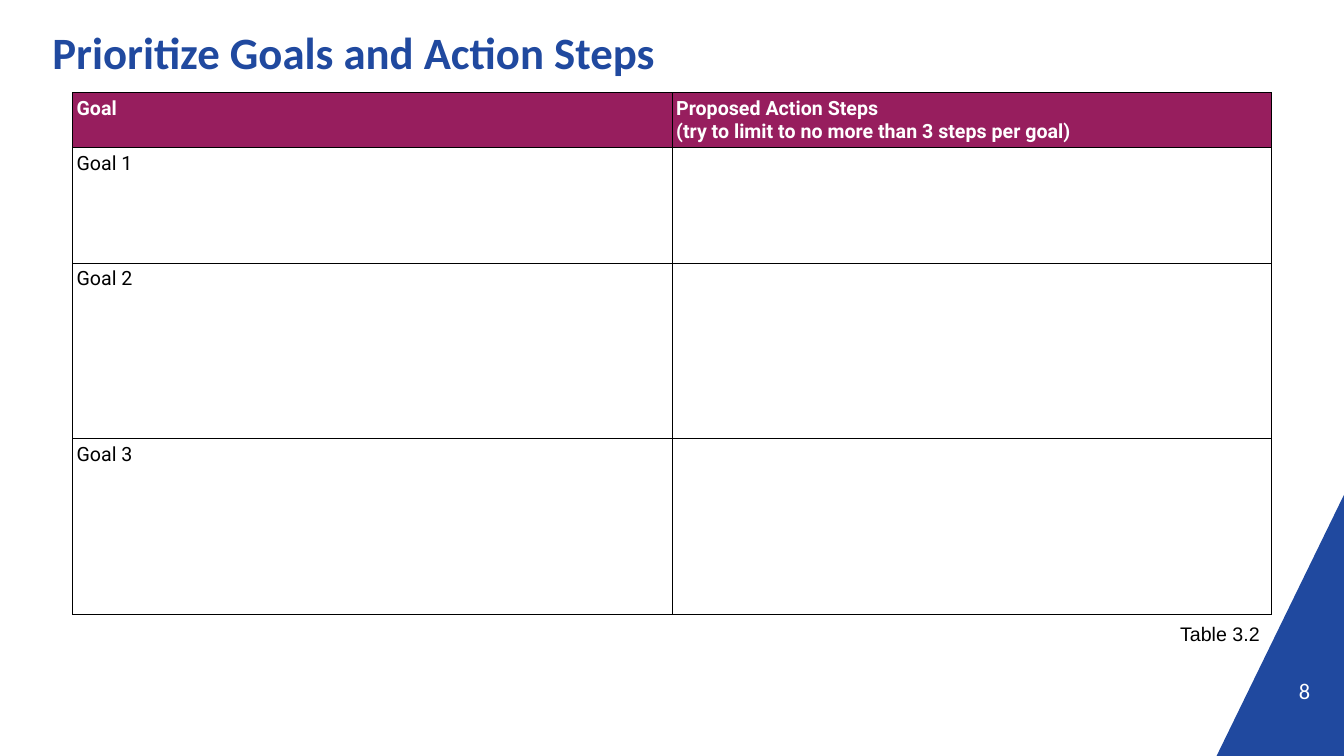
from lxml import etree
from pptx import Presentation
from pptx.dml.color import RGBColor
from pptx.enum.text import MSO_ANCHOR, PP_ALIGN
from pptx.oxml.ns import qn
from pptx.util import Cm, Pt

MIDDLE, TOP = MSO_ANCHOR.MIDDLE, MSO_ANCHOR.TOP
LEFT, RIGHT = PP_ALIGN.LEFT, PP_ALIGN.RIGHT
BLUE = RGBColor(0x20, 0x49, 0x9F)
PLUM = RGBColor(0x97, 0x1E, 0x5E)
WHITE = RGBColor(0xFF, 0xFF, 0xFF)
BLACK = RGBColor(0x00, 0x00, 0x00)
SLIDE_WIDTH, SLIDE_HEIGHT = 33.87, 19.05


class GoalSlide:
    heading_font = "Calibri"
    table_font = "Roboto"
    caption_font = "Arial"
    cell_inset = Cm(0.1)
    border_width = Pt(0.75)

    def __init__(self, deck):
        self.slide = deck.slides.add_slide(deck.slide_layouts[6])

    def add_lines(self, paragraph, lines, font, size, color, bold=False):
        for index, line in enumerate(lines):
            if index:
                paragraph.add_line_break()
            run = paragraph.add_run()
            run.text = line
            run.font.name = font
            run.font.size = Pt(size)
            run.font.bold = bold
            run.font.color.rgb = color

    def text(self, box, words, font, size, color, bold=False,
             align=LEFT, anchor=MIDDLE, insets=(0, 0)):
        frame = self.slide.shapes.add_textbox(*map(Cm, box)).text_frame
        frame.word_wrap = True
        frame.vertical_anchor = anchor
        frame.margin_left = frame.margin_right = Cm(insets[0])
        frame.margin_top = frame.margin_bottom = Cm(insets[1])
        frame.paragraphs[0].alignment = align
        self.add_lines(frame.paragraphs[0], [words], font, size, color, bold)

    def polygon(self, points, color):
        start, *others = [(Cm(x), Cm(y)) for x, y in points]
        builder = self.slide.shapes.build_freeform(*start)
        builder.add_line_segments(others, close=True)
        outline = builder.convert_to_shape()
        outline.shadow.inherit = False
        outline.fill.solid()
        outline.fill.fore_color.rgb = color
        outline.line.fill.background()

    def border(self, cell):
        properties = cell._tc.get_or_add_tcPr()
        for side in ("a:lnL", "a:lnR", "a:lnT", "a:lnB"):
            edge = etree.SubElement(properties, qn(side), w=str(self.border_width))
            fill = etree.SubElement(edge, qn("a:solidFill"))
            etree.SubElement(fill, qn("a:srgbClr"), val=str(BLACK))

    def table(self, left, top, column_width, row_heights, rows):
        columns = len(rows[0])
        grid = self.slide.shapes.add_table(
            len(rows), columns, Cm(left), Cm(top),
            Cm(column_width * columns), Cm(sum(row_heights))).table
        grid.first_row = grid.horz_banding = False
        for column in grid.columns:
            column.width = Cm(column_width)
        for index, (height, row) in enumerate(zip(row_heights, rows)):
            grid.rows[index].height = Cm(height)
            for position, lines in enumerate(row):
                self.cell(grid.cell(index, position), lines, header=index == 0)

    def cell(self, cell, lines, header):
        self.border(cell)
        cell.margin_left = cell.margin_right = self.cell_inset
        cell.margin_top = cell.margin_bottom = self.cell_inset
        if header:
            cell.fill.solid()
            cell.fill.fore_color.rgb = PLUM
        else:
            cell.fill.background()
        paragraph = cell.text_frame.paragraphs[0]
        paragraph.space_after = Pt(10)
        self.add_lines(paragraph, lines, self.table_font, 14,
                       WHITE if header else BLACK, header)


def main():
    deck = Presentation()
    deck.slide_width, deck.slide_height = Cm(SLIDE_WIDTH), Cm(SLIDE_HEIGHT)
    goals = GoalSlide(deck)
    goals.polygon([(SLIDE_WIDTH, 12.47), (30.66, SLIDE_HEIGHT),
                   (SLIDE_WIDTH, SLIDE_HEIGHT)], BLUE)
    goals.text((1.32, 0.61, 24.51, 1.37), "Prioritize Goals and Action Steps",
               goals.heading_font, 32, BLUE, bold=True)
    goals.text((30.5, 17.02, 2.52, 0.76), "8",
               goals.heading_font, 16, WHITE, align=RIGHT)
    header = [["Goal"], ["Proposed Action Steps ",
                         "(try to limit to no more than 3 steps per goal)"]]
    goal_rows = [[[f"Goal {number}"], []] for number in range(1, 4)]
    goals.table(1.83, 2.34, 15.11, [1.38, 2.9, 4.43, 4.43], [header] + goal_rows)
    goals.text((29.49, 15.54, 3.53, 0.86), "Table 3.2",
               goals.caption_font, 14, BLACK, anchor=TOP, insets=(0.25, 0.13))
    deck.save("out.pptx")


if __name__ == "__main__":
    main()
